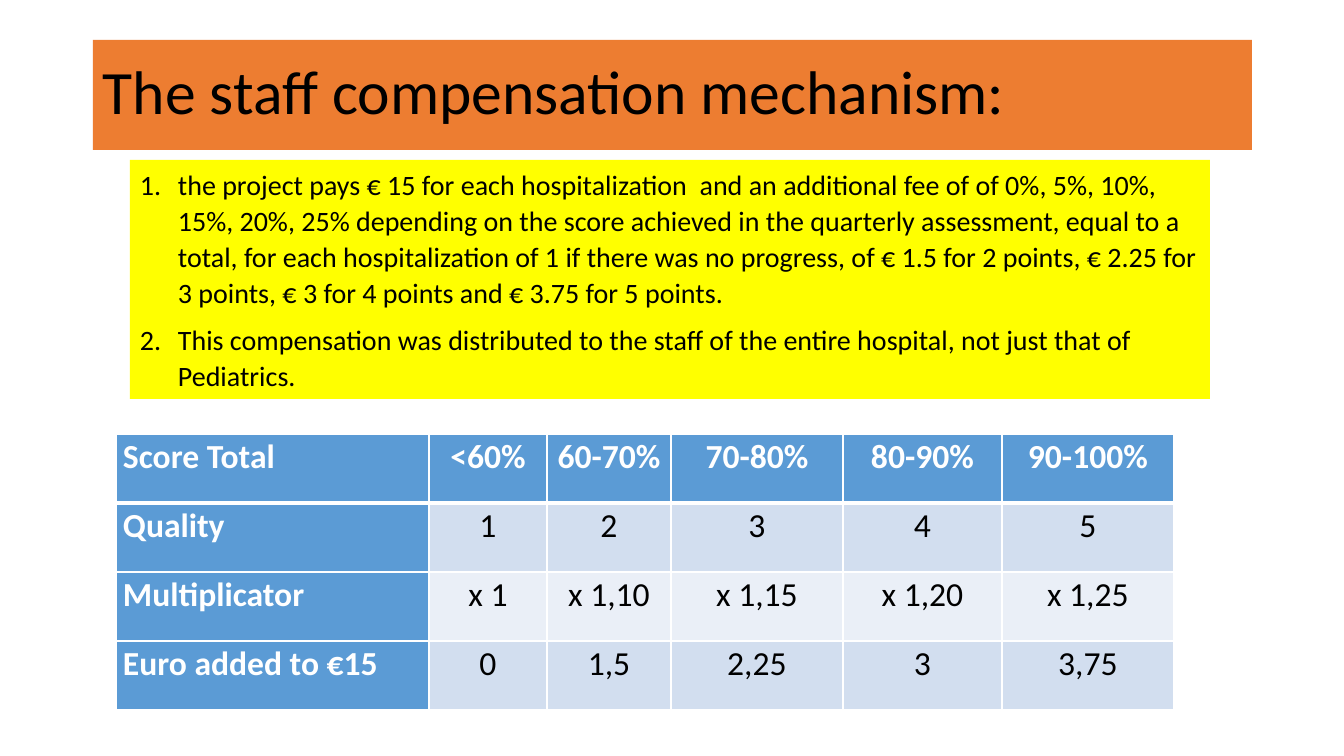
"""Build the staff compensation slide."""
from lxml import etree
from pptx import Presentation, util as u
from pptx.dml.color import RGBColor
from pptx.enum import shapes, text
from pptx.oxml.ns import qn

TITLE = "The staff compensation mechanism:"
RULES = [
    "the project pays € 15 for each hospitalization  and an additional fee of of 0%, 5%, 10%, "
    "15%, 20%, 25% depending on the score achieved in the quarterly assessment, equal to a "
    "total, for each hospitalization of 1 if there was no progress, of € 1.5 for 2 points, "
    "€ 2.25 for 3 points, € 3 for 4 points and € 3.75 for 5 points.",
    "This compensation was distributed to the staff of the entire hospital, not just that of "
    "Pediatrics.",
]
SCORES = [
    ["Score Total", "<60%", "60-70%", "70-80%", "80-90%", "90-100%"],
    ["Quality", "1", "2", "3", "4", "5"],
    ["Multiplicator", "x 1", "x 1,10", "x 1,15", "x 1,20", "x 1,25"],
    ["Euro added to €15", "0", "1,5", "2,25", "3", "3,75"],
]
COLUMN_WIDTHS = [313, 118, 124, 172, 159, 172]
ROW_HEIGHT = 69
FONT = "Calibri"
BLACK, WHITE, BLUE = "000000", "FFFFFF", "5B9BD5"
ORANGE, YELLOW = "ED7D31", "FFFF00"
BANDS = ["EAEFF7", "D2DEEF"]


def px(length):
    return u.Emu(round(length * 914400 / 100.8))


def paint(fill, color):
    fill.solid()
    fill.fore_color.rgb = RGBColor.from_string(color)


def add_run(para, words, size, color=BLACK, bold=False):
    span = para.add_run()
    span.text = words
    span.font.name, span.font.size, span.font.bold = FONT, u.Pt(size), bold
    paint(span.font.fill, color)


def add_panel(page, left, top, width, height, color):
    box = page.shapes.add_shape(
        shapes.MSO_SHAPE.RECTANGLE, px(left), px(top), px(width), px(height))
    box.shadow.inherit = False
    paint(box.fill, color)
    box.line.fill.background()
    box.text_frame.word_wrap = True
    return box.text_frame


def number(para):
    props = para._p.get_or_add_pPr()
    props.set("marL", str(px(38)))
    props.set("indent", str(-px(38)))
    etree.SubElement(props, qn("a:buFont"), typeface="+mj-lt")
    etree.SubElement(props, qn("a:buAutoNum"), type="arabicPeriod")


def add_border(cell, side, points):
    line = etree.SubElement(
        cell._tc.get_or_add_tcPr(), qn(f"a:ln{side}"), w=str(u.Pt(points)))
    solid = etree.SubElement(line, qn("a:solidFill"))
    etree.SubElement(solid, qn("a:srgbClr"), val=WHITE)


def add_title(page):
    frame = add_panel(page, 93, 40, 1159, 110, ORANGE)
    frame.vertical_anchor = text.MSO_ANCHOR.MIDDLE
    para = frame.paragraphs[0]
    para.alignment, para.line_spacing = text.PP_ALIGN.LEFT, 0.9
    add_run(para, TITLE, 44)


def add_rules(page):
    frame = add_panel(page, 130, 160, 1080, 239, YELLOW)
    frame.vertical_anchor = text.MSO_ANCHOR.TOP
    frame.auto_size = text.MSO_AUTO_SIZE.SHAPE_TO_FIT_TEXT
    for index, rule in enumerate(RULES):
        para = frame.add_paragraph() if index else frame.paragraphs[0]
        para.alignment, para.line_spacing = text.PP_ALIGN.LEFT, 1.07
        para.space_after = u.Pt(8)
        number(para)
        add_run(para, rule, 20)


def add_scores(page):
    table = page.shapes.add_table(
        len(SCORES), len(COLUMN_WIDTHS), px(116), px(434),
        px(sum(COLUMN_WIDTHS)), px(ROW_HEIGHT * len(SCORES))).table
    table.first_col = True
    for column, width in zip(table.columns, COLUMN_WIDTHS):
        column.width = px(width)
    for r, values in enumerate(SCORES):
        table.rows[r].height = px(ROW_HEIGHT)
        for c, value in enumerate(values):
            cell = table.cell(r, c)
            heading = r == 0 or c == 0
            cell.margin_left = cell.margin_right = px(7)
            cell.margin_top = cell.margin_bottom = 0
            for side in "LRTB":
                under_header = (r, side) in [(0, "B"), (1, "T")]
                add_border(cell, side, 3 if under_header else 1)
            paint(cell.fill, BLUE if heading else BANDS[r % 2])
            para = cell.text_frame.paragraphs[0]
            para.alignment = text.PP_ALIGN.CENTER if c else text.PP_ALIGN.LEFT
            para.line_spacing = 1.07
            add_run(para, value, 24, WHITE if heading else BLACK, heading)


def main():
    deck = Presentation()
    deck.slide_width, deck.slide_height = px(1344), px(756)
    page = deck.slides.add_slide(deck.slide_layouts[6])
    add_title(page)
    add_scores(page)
    add_rules(page)
    deck.save("out.pptx")


if __name__ == "__main__":
    main()
